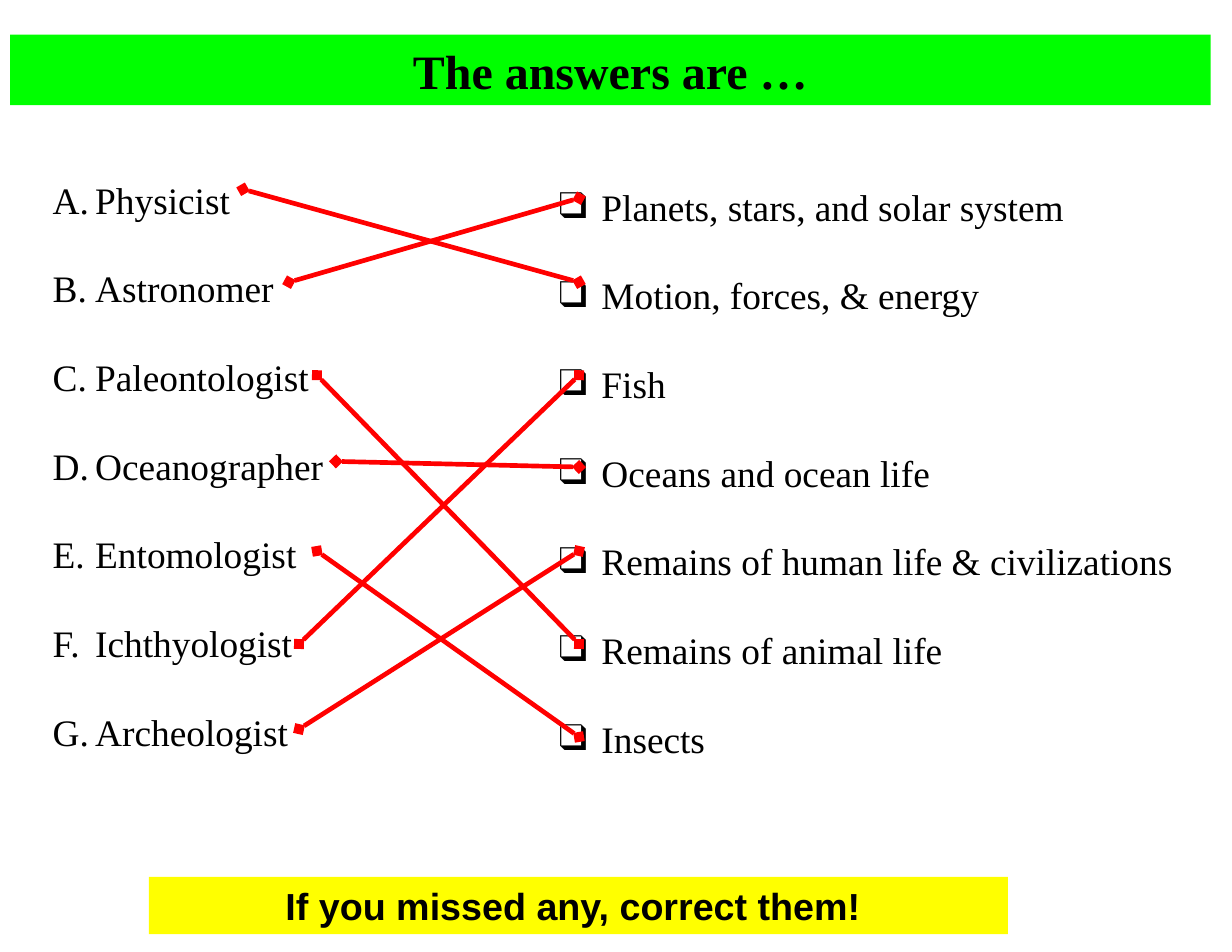
from dataclasses import dataclass

from lxml import etree
from pptx import Presentation
from pptx.dml.color import RGBColor
from pptx.enum.shapes import MSO_CONNECTOR, MSO_SHAPE
from pptx.enum.text import MSO_ANCHOR, MSO_AUTO_SIZE, PP_ALIGN
from pptx.oxml.ns import qn
from pptx.util import Inches, Pt

STRAIGHT = MSO_CONNECTOR.STRAIGHT
RECTANGLE = MSO_SHAPE.RECTANGLE
CENTER, LEFT = PP_ALIGN.CENTER, PP_ALIGN.LEFT
TOP, MIDDLE = MSO_ANCHOR.TOP, MSO_ANCHOR.MIDDLE
NO_AUTOFIT = MSO_AUTO_SIZE.NONE
TWO_CONTENT_LAYOUT = 3


@dataclass(frozen=True)
class Theme:
    ink: RGBColor = RGBColor(0, 0, 0)
    title_fill: RGBColor = RGBColor(0, 255, 0)
    reminder_fill: RGBColor = RGBColor(255, 255, 0)
    match_line: RGBColor = RGBColor(255, 0, 0)
    serif: str = "Times New Roman"
    sans: str = "Arial"
    title_size: float = 30.8
    list_size: float = 24
    reminder_size: float = 24.2
    match_width: float = 3


@dataclass(frozen=True)
class Box:
    left: float
    top: float
    width: float
    height: float


@dataclass(frozen=True)
class Career:
    name: str
    line_x: float
    line_y: float
    answer: int  # index of the matching field


@dataclass(frozen=True)
class Field:
    name: str
    line_y: float


THEME = Theme()
FIELD_LINE_X = 5.17

CAREERS = [
    Career("Physicist", 2.17, 1.69, 1),
    Career("Astronomer", 2.58, 2.52, 0),
    Career("Paleontologist", 2.83, 3.35, 5),
    Career("Oceanographer", 3.0, 4.12, 3),
    Career("Entomologist", 2.83, 4.92, 6),
    Career("Ichthyologist", 2.67, 5.75, 2),
    Career("Archeologist", 2.67, 6.51, 4),
]
FIELDS = [
    Field("Planets, stars, and solar system", 1.77),
    Field("Motion, forces, & energy", 2.52),
    Field("Fish", 3.35),
    Field("Oceans and ocean life", 4.17),
    Field("Remains of human life & civilizations", 4.92),
    Field("Remains of animal life", 5.75),
    Field("Insects", 6.58),
]


def place(shape, box: Box) -> None:
    shape.left, shape.top = Inches(box.left), Inches(box.top)
    shape.width, shape.height = Inches(box.width), Inches(box.height)


def style_font(font, name: str, size: float, bold: bool) -> None:
    font.name, font.size, font.bold = name, Pt(size), bold
    font.color.rgb = THEME.ink


def fill_banner(shape, text: str, fill: RGBColor, font_name: str,
                size: float, anchor) -> None:
    shape.fill.solid()
    shape.fill.fore_color.rgb = fill
    shape.line.fill.background()
    frame = shape.text_frame
    frame.word_wrap = True
    frame.auto_size = NO_AUTOFIT
    frame.vertical_anchor = anchor
    frame.text = text
    para = frame.paragraphs[0]
    para.alignment = CENTER
    style_font(para.font, font_name, size, True)


def fill_list(shape, box: Box, items: list[str], bullet_tag: str,
              bullet: dict[str, str]) -> None:
    place(shape, box)
    frame = shape.text_frame
    frame.word_wrap = True
    frame.auto_size = NO_AUTOFIT
    frame.vertical_anchor = TOP
    frame.text = "\n".join(items)
    for para in frame.paragraphs:
        para.alignment = LEFT
        para.line_spacing = 1.5
        para.space_before = Pt(13.8)
        properties = para._p.get_or_add_pPr()
        properties.set("marL", str(Inches(0.38)))
        properties.set("indent", str(Inches(-0.38)))
        etree.SubElement(properties, qn("a:buFont"), typeface=THEME.serif)
        etree.SubElement(properties, qn(bullet_tag), bullet)
        style_font(para.font, THEME.serif, THEME.list_size, False)


def draw_match(page, career: Career) -> None:
    field = FIELDS[career.answer]
    connector = page.shapes.add_connector(
        STRAIGHT, Inches(career.line_x), Inches(career.line_y),
        Inches(FIELD_LINE_X), Inches(field.line_y))
    connector.line.color.rgb = THEME.match_line
    connector.line.width = Pt(THEME.match_width)
    line = connector.line._get_or_add_ln()
    for end in ("a:headEnd", "a:tailEnd"):
        etree.SubElement(line, qn(end), type="diamond")
    etree.SubElement(connector._element.spPr, qn("a:effectLst"))


def main() -> None:
    deck = Presentation()
    deck.slide_width, deck.slide_height = Inches(11), Inches(8.5)
    page = deck.slides.add_slide(deck.slide_layouts[TWO_CONTENT_LAYOUT])
    title, career_list, field_list = page.placeholders

    # Title banner
    place(title, Box(0.09, 0.31, 10.72, 0.63))
    fill_banner(title, "The answers are …", THEME.title_fill,
                THEME.serif, THEME.title_size, MIDDLE)

    # Reminder banner
    reminder = page.shapes.add_shape(RECTANGLE, 0, 0, 0, 0)
    reminder.shadow.inherit = False
    place(reminder, Box(1.33, 7.83, 7.67, 0.51))
    fill_banner(reminder, "If you missed any, correct them! ",
                THEME.reminder_fill, THEME.sans, THEME.reminder_size, TOP)

    # Careers and their fields
    fill_list(career_list, Box(0.37, 1.33, 2.83, 5.48),
              [career.name for career in CAREERS],
              "a:buAutoNum", {"type": "alphaUcPeriod"})
    fill_list(field_list, Box(4.89, 1.39, 5.83, 5.48),
              [field.name for field in FIELDS], "a:buChar", {"char": "❑"})

    # Lines joining each career to its answer
    for career in CAREERS:
        draw_match(page, career)

    deck.save("out.pptx")


if __name__ == "__main__":
    main()
